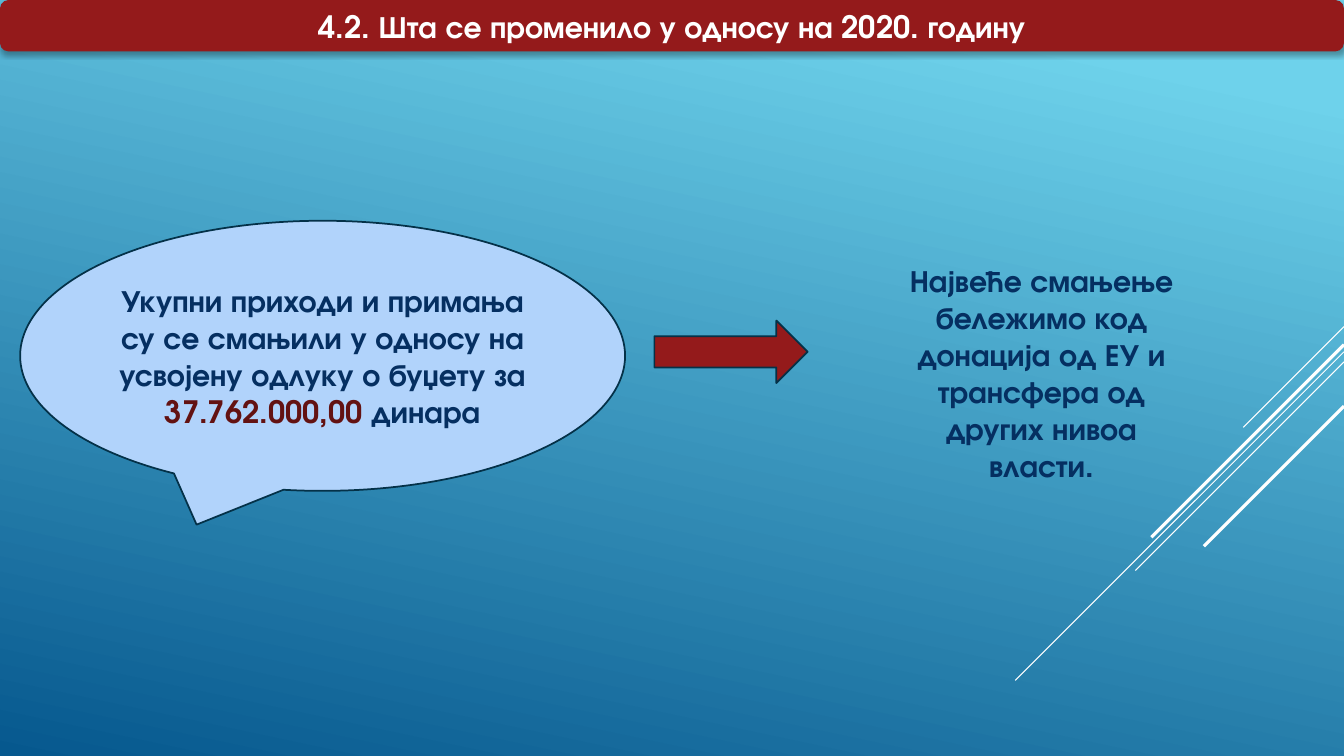
from lxml.etree import SubElement
from pptx import Presentation
from pptx.dml.color import RGBColor
from pptx.enum.shapes import MSO_CONNECTOR, MSO_SHAPE
from pptx.enum.text import MSO_ANCHOR, PP_ALIGN
from pptx.oxml.ns import qn
from pptx.util import Inches, Pt

WHITE = RGBColor(0xFF, 0xFF, 0xFF)
RED = RGBColor(0x94, 0x1A, 0x1B)
MAROON = RGBColor(0x63, 0x12, 0x12)
NAVY = RGBColor(0x05, 0x2F, 0x61)
EDGE = RGBColor(0x04, 0x31, 0x48)
PALE = RGBColor(0xB1, 0xD3, 0xFB)
SKY = RGBColor(0x6E, 0xD2, 0xEB)
DEEP = RGBColor(0x06, 0x58, 0x8E)
WIDTH, HEIGHT = 13.33, 7.5


class Painter:
    font = "TeX Gyre Adventor"
    size = Pt(22)

    def __init__(self, slide):
        self.slide = slide

    def backdrop(self):
        fill = self.slide.background.fill
        fill.gradient()
        fill.gradient_angle = 258
        for stop, place, color in zip(fill.gradient_stops, (0.1, 1), (SKY, DEEP)):
            stop.position = place
            stop.color.rgb = color

    def streak(self, top, span, weight):
        """Draw a 45 degree line down and left from the right edge."""
        line = self.slide.shapes.add_connector(
            MSO_CONNECTOR.STRAIGHT, Inches(WIDTH), Inches(top),
            Inches(WIDTH - span), Inches(top + span))
        line.line.color.rgb = WHITE
        line.line.width = Pt(weight)
        SubElement(line._element.spPr, qn("a:effectLst"))

    def shape(self, kind, box, fill=None, edge=None):
        shape = self.slide.shapes.add_shape(kind, *map(Inches, box))
        shape.shadow.inherit = False
        if fill is None:
            shape.fill.background()
        else:
            shape.fill.solid()
            shape.fill.fore_color.rgb = fill
        if edge is None:
            shape.line.fill.background()
        else:
            shape.line.color.rgb = edge
            shape.line.width = Pt(1.25)
        return shape

    def label(self, shape, *parts):
        """Fill a shape with centred bold runs, given as (text, color)."""
        frame = shape.text_frame
        frame.word_wrap = True
        frame.vertical_anchor = MSO_ANCHOR.MIDDLE
        para = frame.paragraphs[0]
        para.alignment = PP_ALIGN.CENTER
        para.font.name = self.font
        para.font.size = self.size
        para.font.bold = True
        for text, color in parts:
            run = para.add_run()
            run.text = text
            run.font.color.rgb = color

    def shade(self, shape):
        """Add a soft shadow below a shape."""
        effects = shape._element.spPr.find(qn("a:effectLst"))
        outer = SubElement(effects, qn("a:outerShdw"), blurRad=str(Pt(3.5)),
                           dist=str(Pt(2.2)), dir="5400000", rotWithShape="0")
        color = SubElement(outer, qn("a:srgbClr"), val="000000")
        SubElement(color, qn("a:alpha"), val="32000")


def main():
    deck = Presentation()
    deck.slide_width, deck.slide_height = Inches(WIDTH), Inches(HEIGHT)
    paint = Painter(deck.slides.add_slide(deck.slide_layouts[6]))
    paint.backdrop()
    for top, span, weight in ((3.24, 1, 0.75), (3.49, 3.26, 0.75),
                              (3.59, 2.07, 0.75), (3.42, 1.91, 2.25),
                              (4.03, 1.39, 2.25)):
        paint.streak(top, span, weight)

    title = paint.shape(MSO_SHAPE.ROUNDED_RECTANGLE, (0, 0, WIDTH, 0.51), RED)
    paint.shade(title)
    paint.label(title, ("4.2. Шта се променило у односу на 2020. годину", WHITE))

    total = paint.shape(MSO_SHAPE.OVAL_CALLOUT, (0.2, 2.19, 6, 2.68), PALE, EDGE)
    paint.label(
        total,
        ("Укупни приходи и примања су се смањили у односу на "
         "усвојену одлуку о буџету за ", NAVY),
        ("37.762.000,00 ", MAROON),
        ("динара", NAVY))

    paint.shape(MSO_SHAPE.RIGHT_ARROW, (6.49, 3.18, 1.52, 0.62), RED, EDGE)

    cause = paint.shape(MSO_SHAPE.TEAR, (8.31, 2.09, 4.04, 3.21))
    paint.label(cause, ("Највеће смањење бележимо код донација од ЕУ и "
                        "трансфера од других нивоа власти.", NAVY))
    deck.save("out.pptx")


if __name__ == "__main__":
    main()
